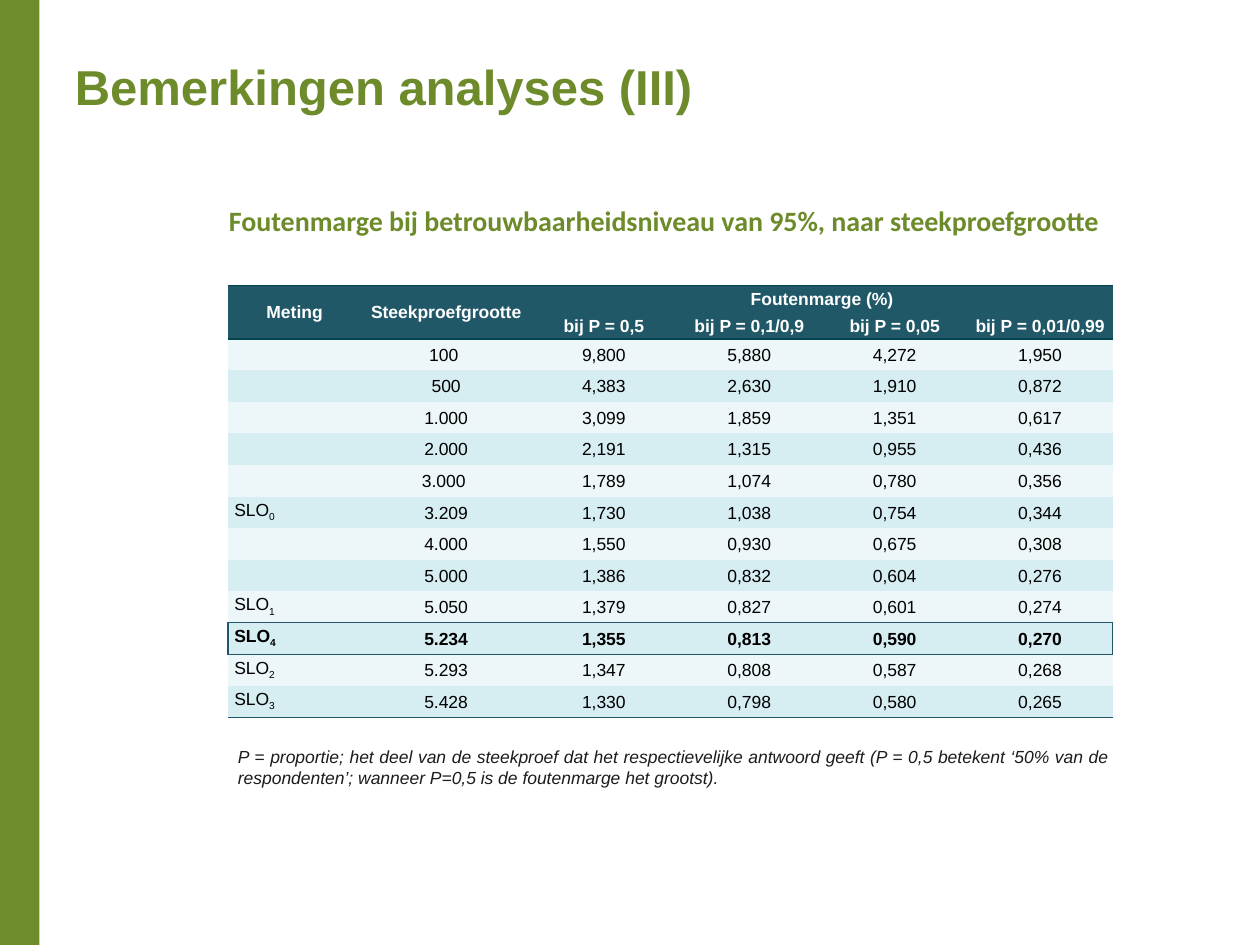
from lxml import etree
from pptx import Presentation
from pptx.dml.color import RGBColor
from pptx.enum.shapes import MSO_SHAPE
from pptx.enum.text import MSO_ANCHOR, MSO_AUTO_SIZE, PP_ALIGN
from pptx.oxml.ns import qn
from pptx.util import Pt

LEFT, CENTER, JUSTIFY = PP_ALIGN.LEFT, PP_ALIGN.CENTER, PP_ALIGN.JUSTIFY
TOP, MIDDLE = MSO_ANCHOR.TOP, MSO_ANCHOR.MIDDLE
NO_STYLE = "{2D5ABB26-0587-4C30-8999-92F81FD0307C}"

COLORS = {
    "bar": "6E8C2B", "heading": "6D8B2B", "white": "FFFFFF", "black": "000000",
    "note": "1C1C1C", "header": "215868", "header_line": "00444E",
    "light": "EDF7F9", "dark": "D6EDF2",
}


def write(paragraph, text, size=10, font="Arial", color="black", bold=False,
          italic=False, align=LEFT, spacing=None, subscript=""):
    paragraph.alignment = align
    if spacing:
        paragraph.line_spacing = Pt(spacing)
    for part in filter(None, (text, subscript)):
        run = paragraph.add_run()
        run.text = part
        run.font.size = Pt(size)
        run.font.name = font
        run.font.bold = bold
        run.font.italic = italic
        run.font.color.rgb = RGBColor.from_string(COLORS[color])
    if subscript:
        run.font._element.set("baseline", "-25000")
    if not text:  # an empty cell keeps the small text height
        etree.SubElement(paragraph._p, qn("a:endParaRPr"), sz=str(size * 100))


def format_cell(cell, fill, borders):
    cell.margin_left = cell.margin_right = Pt(3.6)
    cell.margin_top = cell.margin_bottom = 0
    cell.vertical_anchor = MIDDLE
    properties = cell._tc.get_or_add_tcPr()
    for side in "LRTB":
        if side in borders:
            line = etree.SubElement(properties, qn(f"a:ln{side}"), w=str(Pt(1)))
            line_fill = etree.SubElement(line, qn("a:solidFill"))
            etree.SubElement(line_fill, qn("a:srgbClr"), val=COLORS[borders[side]])
    cell.fill.solid()
    cell.fill.fore_color.rgb = RGBColor.from_string(COLORS[fill])


presentation = Presentation()
presentation.slide_width, presentation.slide_height = Pt(720), Pt(540)
slide = presentation.slides.add_slide(presentation.slide_layouts[5])

# Green side bar
bar = slide.shapes.add_shape(MSO_SHAPE.RECTANGLE, 0, 0, Pt(22.5), Pt(540))
bar.shadow.inherit = False
bar.fill.solid()
bar.fill.fore_color.rgb = RGBColor.from_string(COLORS["bar"])
bar.line.fill.background()

# Title
title = slide.shapes.title
title.left, title.top, title.width, title.height = Pt(35.6), Pt(28.8), Pt(371.5), Pt(41)
title.text_frame.word_wrap = False
title.text_frame.auto_size = MSO_AUTO_SIZE.SHAPE_TO_FIT_TEXT
title.text_frame.vertical_anchor = TOP
write(title.text_frame.paragraphs[0], "Bemerkingen analyses (III)",
      size=28, color="heading", bold=True)

# Table caption and note
text_boxes = [
    ((123.8, 112.6, 571, 26.6), TOP,
     "Foutenmarge bij betrouwbaarheidsniveau van 95%, naar steekproefgrootte",
     dict(size=16, font="Calibri", color="heading", bold=True)),
    ((128.9, 422.6, 511.2, 31.7), MIDDLE,
     "P = proportie; het deel van de steekproef dat het respectievelijke antwoord "
     "geeft (P = 0,5 betekent ‘50% van de respondenten’; wanneer P=0,5 is de "
     "foutenmarge het grootst).",
     dict(color="note", italic=True, align=JUSTIFY)),
]
for box, anchor, text, text_format in text_boxes:
    frame = slide.shapes.add_textbox(*map(Pt, box)).text_frame
    frame.word_wrap = True
    frame.auto_size = MSO_AUTO_SIZE.SHAPE_TO_FIT_TEXT
    frame.vertical_anchor = anchor
    write(frame.paragraphs[0], text, **text_format)

# Table data; the first value is the subscript of the SLO measurement
header_rows = [
    ("Meting", "Steekproefgrootte", "Foutenmarge (%)", "", "", ""),
    ("", "", "bij P = 0,5", "bij P = 0,1/0,9", "bij P = 0,05", "bij P = 0,01/0,99"),
]
data_rows = [
    ("", "100 ", "9,800", "5,880", "4,272", "1,950"),
    ("", "500", "4,383", "2,630", "1,910", "0,872"),
    ("", "1.000", "3,099", "1,859", "1,351", "0,617"),
    ("", "2.000", "2,191", "1,315", "0,955", "0,436"),
    ("", "3.000 ", "1,789", "1,074", "0,780", "0,356"),
    ("0", "3.209", "1,730", "1,038", "0,754", "0,344"),
    ("", "4.000", "1,550", "0,930", "0,675", "0,308"),
    ("", "5.000", "1,386", "0,832", "0,604", "0,276"),
    ("1", "5.050", "1,379", "0,827", "0,601", "0,274"),
    ("4", "5.234", "1,355", "0,813", "0,590", "0,270"),
    ("2", "5.293", "1,347", "0,808", "0,587", "0,268"),
    ("3", "5.428", "1,330", "0,798", "0,580", "0,265"),
]
column_widths = [76, 97.2] + [83.1] * 4
row_heights = [15, 15.4] + [18.05] * len(data_rows)

# Table frame
table_shape = slide.shapes.add_table(
    len(row_heights), len(column_widths), Pt(130.3), Pt(163.2),
    Pt(sum(column_widths)), Pt(sum(row_heights)))
table = table_shape.table
table.first_row = table.horz_banding = False
table._tbl.tblPr.find(qn("a:tableStyleId")).text = NO_STYLE
for column, width in zip(table.columns, column_widths):
    column.width = Pt(width)
for row, height in zip(table.rows, row_heights):
    row.height = Pt(height)

# Header rows
for row_index, labels in enumerate(header_rows):
    for column_index, label in enumerate(labels):
        cell = table.cell(row_index, column_index)
        borders = {"T" if row_index == 0 else "B": "header_line"}
        if column_index < 2:
            borders = {"T": "header_line", "B": "header_line"}
        format_cell(cell, "header", borders)
        write(cell.text_frame.paragraphs[0], label, color="white", bold=True,
              align=CENTER, spacing=12)
for first, last in [((0, 0), (1, 0)), ((0, 1), (1, 1)), ((0, 2), (0, 5))]:
    table.cell(*first).merge(table.cell(*last))

# Data rows, with a frame around the SLO 4 row
framed = [row[0] for row in data_rows].index("4")
last_row, last_column = len(data_rows) - 1, len(column_widths) - 1
for row_index, (measurement, *values) in enumerate(data_rows):
    fill = "dark" if row_index % 2 else "light"
    bold = row_index == framed
    for column_index, value in enumerate(["SLO" if measurement else "", *values]):
        borders = {}
        if row_index in (framed - 1, framed, last_row):
            borders["B"] = "header"
        if row_index == framed:
            borders["T"] = "header"
            if column_index == 0:
                borders["L"] = "header"
            if column_index == last_column:
                borders["R"] = "header"
        cell = table.cell(row_index + len(header_rows), column_index)
        format_cell(cell, fill, borders)
        write(cell.text_frame.paragraphs[0], value, bold=bold, spacing=12,
              align=CENTER if column_index else LEFT,
              subscript="" if column_index else measurement)

presentation.save("out.pptx")
